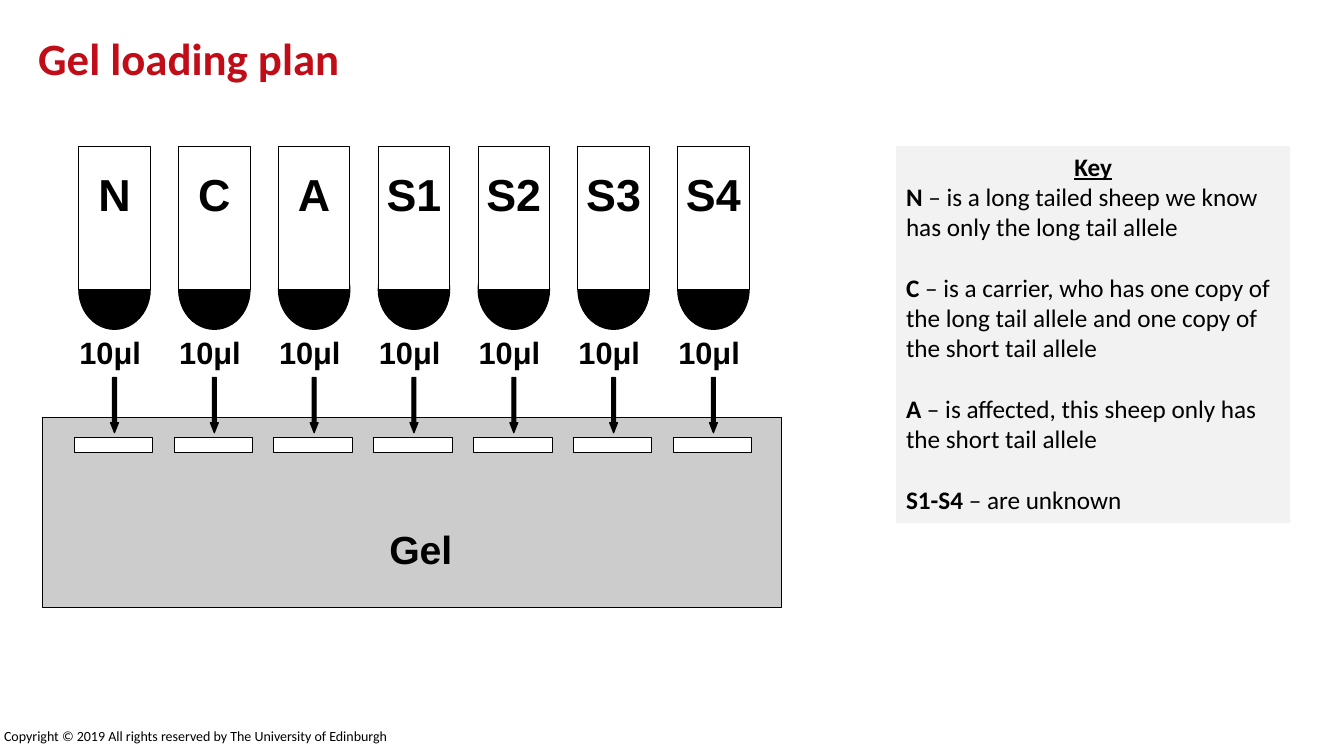
import pptx
import pptx.dml.color
import pptx.enum.shapes
import pptx.enum.text
import pptx.util
from dataclasses import dataclass

Pt = pptx.util.Pt
SHAPE = pptx.enum.shapes.MSO_SHAPE
ALIGN = pptx.enum.text.PP_ALIGN
ANCHOR = pptx.enum.text.MSO_ANCHOR


@dataclass(frozen=True)
class Theme:
    red: str = "C10D18"
    black: str = "000000"
    white: str = "FFFFFF"
    gel_grey: str = "CCCCCC"
    key_grey: str = "F2F2F2"
    heading_font: str = "Calibri"
    diagram_font: str = "Arial"
    large: int = 32
    gel: int = 28
    volume: int = 22
    key: int = 18
    small: int = 10
    outline: float = 0.75


THEME = Theme()
SAMPLES = ["N", "C", "A", "S1", "S2", "S3", "S4"]
FIRST_LANE = 81.8
LANE_PITCH = 71.3
KEY_ENTRIES = [
    ("N", " – is a long tailed sheep we know has only the long tail allele"),
    ("C", " – is a carrier, who has one copy of the long tail allele "
          "and one copy of the short tail allele"),
    ("A", " – is affected, this sheep only has the short tail allele"),
    ("S1-S4", " – are unknown"),
]


def apply(target, values):
    for name, value in values.items():
        setattr(target, name, value)


def rgb(colour):
    return pptx.dml.color.RGBColor.from_string(colour)


def add_run(paragraph, text, size, font, colour=THEME.black, **style):
    run = paragraph.add_run()
    run.text = text
    apply(run.font, {"size": Pt(size), "name": font, **style})
    run.font.color.rgb = rgb(colour)


def add_block(slide, preset, left, top, width, height, fill, outlined=True):
    block = slide.shapes.add_shape(preset, Pt(left), Pt(top), Pt(width), Pt(height))
    block.shadow.inherit = False
    block.fill.solid()
    block.fill.fore_color.rgb = rgb(fill)
    if outlined:
        block.line.color.rgb = rgb(THEME.black)
        block.line.width = Pt(THEME.outline)
    else:
        block.line.fill.background()
    return block


def add_text(slide, text, left, top, width, height, size, font, frame=None,
             paragraph=None, **style):
    box = slide.shapes.add_textbox(Pt(left), Pt(top), Pt(width), Pt(height))
    apply(box.text_frame, {"word_wrap": False, **(frame or {})})
    line = box.text_frame.paragraphs[0]
    apply(line, paragraph or {})
    add_run(line, text, size, font, **style)


def add_diagram_label(slide, text, centre, top, width, height, size):
    add_text(slide, text, centre - width / 2, top, width, height, size,
             THEME.diagram_font, paragraph={"alignment": ALIGN.CENTER}, bold=True)


def add_gel(slide):
    add_block(slide, SHAPE.RECTANGLE, 30.6, 298.1, 527.8, 136.1, THEME.gel_grey)
    add_diagram_label(slide, "Gel", 300.6, 371.8, 60, 41, THEME.gel)


def add_lane(slide, sample, centre):
    add_block(slide, SHAPE.RECTANGLE, centre - 28.8, 312.6, 56.2, 10.8, THEME.white)
    add_block(slide, SHAPE.OVAL, centre - 25.55, 178.4, 51.1, 56.9, THEME.black)
    add_block(slide, SHAPE.RECTANGLE, centre - 25.55, 104.4, 51.1, 102.2, THEME.white)
    add_diagram_label(slide, sample, centre, 115.2, 60, 46, THEME.large)
    add_diagram_label(slide, "10μl", centre - 3.1, 235, 70, 34, THEME.volume)
    arrow = add_block(slide, SHAPE.DOWN_ARROW, centre - 2.9, 269.6, 5.8, 39.6, THEME.black)
    arrow.adjustments[0] = 0.5
    arrow.adjustments[1] = 1.26


def add_key(slide):
    panel = add_block(slide, SHAPE.RECTANGLE, 640.1, 104.4, 281.5, 269.3,
                      THEME.key_grey, outlined=False)
    frame = panel.text_frame
    apply(frame, {"word_wrap": True, "vertical_anchor": ANCHOR.TOP})
    heading = frame.paragraphs[0]
    heading.alignment = ALIGN.CENTER
    add_run(heading, "Key", THEME.key, THEME.heading_font, bold=True, underline=True)
    for index, (sample, meaning) in enumerate(KEY_ENTRIES):
        entry = frame.add_paragraph()
        apply(entry, {"alignment": ALIGN.LEFT, "space_before": Pt(21.8 if index else 0)})
        add_run(entry, sample, THEME.key, THEME.heading_font, bold=True)
        add_run(entry, meaning, THEME.key, THEME.heading_font, bold=False)


def main():
    deck = pptx.Presentation()
    apply(deck, {"slide_width": Pt(960), "slide_height": Pt(540)})
    slide = deck.slides.add_slide(deck.slide_layouts[6])
    add_text(slide, "Gel loading plan", 20.2, 18, 904.3, 51.1, THEME.large,
             THEME.heading_font, {"word_wrap": True, "vertical_anchor": ANCHOR.MIDDLE},
             {"line_spacing": 0.9}, colour=THEME.red, bold=True)
    add_gel(slide)
    for index, sample in enumerate(SAMPLES):
        add_lane(slide, sample, FIRST_LANE + index * LANE_PITCH)
    add_key(slide)
    margins = {f"margin_{side}": Pt(2.9) for side in ("left", "top", "right", "bottom")}
    add_text(slide, "Copyright © 2019 All rights reserved by The University of Edinburgh",
             0, 517, 282.2, 20, THEME.small, THEME.heading_font, margins)
    deck.save("out.pptx")


if __name__ == "__main__":
    main()
